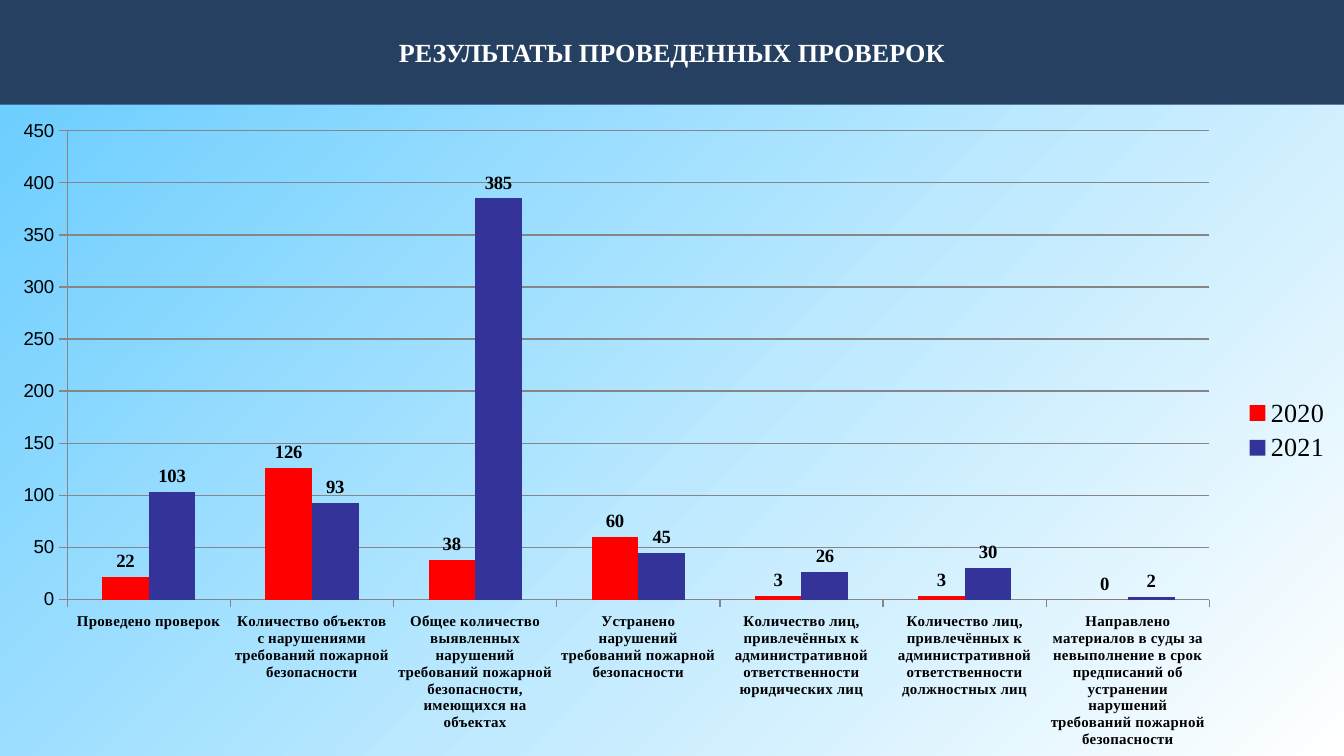
from lxml import etree
from pptx import Presentation
from pptx.chart.data import CategoryChartData
from pptx.dml.color import RGBColor
from pptx.enum import chart as ch, shapes, text
from pptx.oxml import ns
from pptx.util import Cm, Pt

COLORS = {
    "sky": "66CCFF", "white": "FFFFFF", "navy": "254061",
    "black": "000000", "grid": "868686", "2020": "FF0000", "2021": "333399",
}
SERIF = "Times New Roman"
WIDTH, HEIGHT, HEADER = 25.4, 14.29, 1.98

RESULTS = [
    ("Проведено проверок", 22, 103),
    ("Количество объектов с нарушениями требований пожарной безопасности", 126, 93),
    ("Общее количество выявленных нарушений требований пожарной безопасности, "
     "имеющихся на объектах", 38, 385),
    ("Устранено нарушений требований пожарной безопасности", 60, 45),
    ("Количество лиц, привлечённых к административной ответственности "
     "юридических лиц", 3, 26),
    ("Количество лиц, привлечённых к административной ответственности "
     "должностных лиц", 3, 30),
    ("Направлено материалов в суды за невыполнение в срок предписаний об "
     "устранении нарушений требований пожарной безопасности", 0, 2),
]


def rgb(name):
    return RGBColor.from_string(COLORS[name])


def style_font(font, size, name=SERIF, bold=False, color="black"):
    font.size, font.name, font.bold = Pt(size), name, bold
    font.color.rgb = rgb(color)


def write(frame, words, align=text.PP_ALIGN.CENTER, **font_format):
    paragraph = frame.paragraphs[0]
    paragraph.alignment = align
    run = paragraph.add_run()
    run.text = words
    style_font(run.font, **font_format)


def paint_background(slide):
    fill = slide.background.fill
    fill.gradient()
    fill.gradient_angle = 315
    for stop, position, color in zip(fill.gradient_stops, (0, 1), ("sky", "white")):
        stop.position = position
        stop.color.rgb = rgb(color)


def add_header(slide, title):
    band = slide.shapes.add_shape(
        shapes.MSO_SHAPE.RECTANGLE, 0, 0, Cm(WIDTH), Cm(HEADER))
    band.shadow.inherit = False
    band.fill.solid()
    band.fill.fore_color.rgb = rgb("navy")
    band.line.fill.background()
    band.text_frame.vertical_anchor = text.MSO_ANCHOR.MIDDLE
    write(band.text_frame, title, size=14, bold=True, color="white")


def place_plot(chart, **fractions):
    """Fix the inner plot area as fractions of the chart frame."""
    plot_area = chart._chartSpace.chart.plotArea
    for old in plot_area.findall(ns.qn("c:layout")):
        plot_area.remove(old)
    layout = etree.Element(ns.qn("c:layout"))
    manual = etree.SubElement(layout, ns.qn("c:manualLayout"))
    settings = {"layoutTarget": "inner", "xMode": "edge", "yMode": "edge", **fractions}
    for tag, value in settings.items():
        etree.SubElement(manual, ns.qn(f"c:{tag}")).set("val", str(value))
    plot_area.insert(0, layout)


def style_axes(chart):
    for axis in (chart.category_axis, chart.value_axis):
        axis.major_tick_mark = ch.XL_TICK_MARK.OUTSIDE
        axis.minor_tick_mark = ch.XL_TICK_MARK.NONE
        axis.format.line.color.rgb = rgb("grid")
    style_font(chart.category_axis.tick_labels.font, 8, bold=True)
    values = chart.value_axis
    style_font(values.tick_labels.font, 10, name="Arial")
    values.minimum_scale, values.maximum_scale, values.major_unit = 0, 450, 50
    values.has_major_gridlines = True
    values.major_gridlines.format.line.color.rgb = rgb("grid")


def style_series(series):
    series.format.fill.solid()
    series.format.fill.fore_color.rgb = rgb(series.name)
    labels = series.data_labels
    labels.show_value = True
    labels.position = ch.XL_LABEL_POSITION.OUTSIDE_END
    style_font(labels.font, 10, bold=True)


def add_results_chart(slide):
    categories, *years = zip(*RESULTS)
    data = CategoryChartData(number_format="General")
    data.categories = categories
    for year, counts in zip(("2020", "2021"), years):
        data.add_series(year, counts)
    chart = slide.shapes.add_chart(
        ch.XL_CHART_TYPE.COLUMN_CLUSTERED, 0, Cm(HEADER),
        Cm(WIDTH), Cm(HEIGHT - HEADER), data).chart
    style_font(chart.font, 10, name="Arial")
    chart.has_title = False
    chart.has_legend = True
    chart.legend.position = ch.XL_LEGEND_POSITION.RIGHT
    chart.legend.include_in_layout = False
    style_font(chart.legend.font, 14)
    plot = chart.plots[0]
    plot.gap_width, plot.overlap = 150, 0
    plot.vary_by_categories = False
    for series in plot.series:
        style_series(series)
    style_axes(chart)
    place_plot(chart, x=0.05, y=0.04, w=0.85, h=0.72)


def main():
    deck = Presentation()
    deck.slide_width, deck.slide_height = Cm(WIDTH), Cm(HEIGHT)
    slide = deck.slides.add_slide(deck.slide_layouts[6])
    paint_background(slide)
    add_header(slide, "РЕЗУЛЬТАТЫ ПРОВЕДЕННЫХ ПРОВЕРОК")
    add_results_chart(slide)
    deck.save("out.pptx")


if __name__ == "__main__":
    main()
